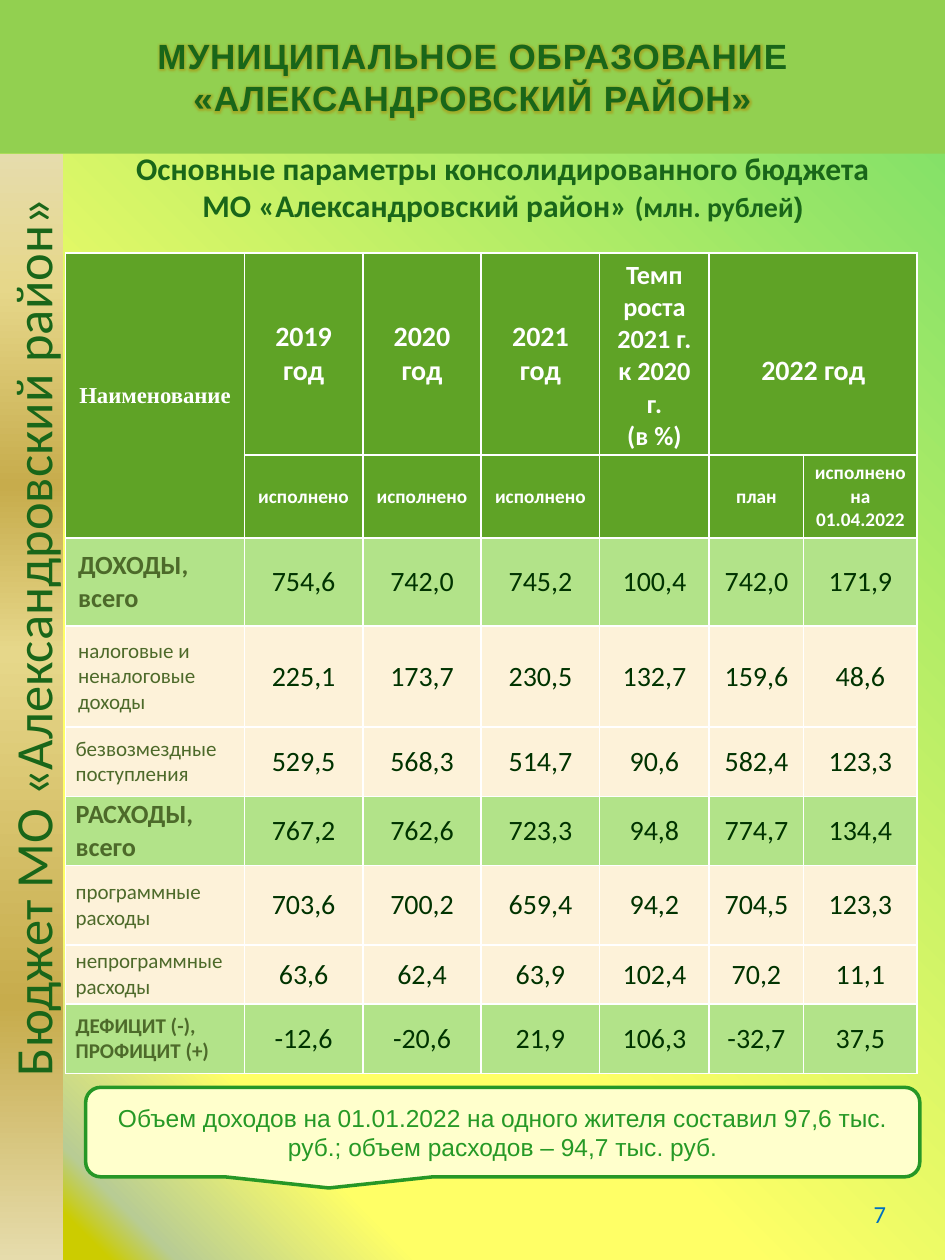
from lxml import etree
from pptx import Presentation
from pptx.dml.color import RGBColor
from pptx.enum.shapes import MSO_SHAPE
from pptx.enum.text import MSO_ANCHOR, PP_ALIGN
from pptx.oxml import parse_xml
from pptx.oxml.ns import nsdecls, qn
from pptx.util import Inches, Pt

RECTANGLE = MSO_SHAPE.RECTANGLE
CALLOUT = MSO_SHAPE.ROUNDED_RECTANGULAR_CALLOUT
LEFT, CENTER, RIGHT = PP_ALIGN.LEFT, PP_ALIGN.CENTER, PP_ALIGN.RIGHT
MIDDLE, TOP, BOTTOM = MSO_ANCHOR.MIDDLE, MSO_ANCHOR.TOP, MSO_ANCHOR.BOTTOM

DARK_GREEN, HEADER_GREEN, TOTAL_GREEN = "196619", "5FA326", "B2E389"
LABEL_GREEN, VALUE_GREEN, CREAM, WHITE = "4D6A2A", "003300", "FDF2D9", "FFFFFF"

BACKGROUND_STOPS = [(5, "CCCC00"), (8, "B8CC94"), (19, "FFFF66"),
                    (34, "FFFF66"), (95, "81E068"), (100, "9ED563")]
SIDEBAR_STOPS = [(0, "E6DCAC"), (12, "E6D78A"), (30, "C7AC4C"),
                 (45, "E6D78A"), (77, "C7AC4C"), (100, "E6DCAC")]

COLUMN_WIDTHS = [1.42, 0.94, 0.94, 0.94, 0.87, 0.75, 0.9]
ROW_HEIGHTS = [1.5, 0.66, 0.7, 0.8, 0.55, 0.55, 0.63, 0.47, 0.55]
YEARS = ["2019 год", "2020 год", "2021 год"]
GROWTH = "Темп роста 2021 г.\nк 2020 г.\n(в %)"
SUBHEADS = ["исполнено"] * 3 + ["", "план", "исполнено на 01.04.2022"]
# Label, label size, is a total row, has wide margins, values
BUDGET_ROWS = [
    ("ДОХОДЫ, всего", 15, True, True, "754,6 742,0 745,2 100,4 742,0 171,9"),
    ("налоговые и неналоговые доходы", 12, False, True, "225,1 173,7 230,5 132,7 159,6 48,6"),
    ("безвозмездные поступления", 12, False, False, "529,5 568,3 514,7 90,6 582,4 123,3"),
    ("РАСХОДЫ, всего", 15, True, False, "767,2 762,6 723,3 94,8 774,7 134,4"),
    ("программные расходы", 12, False, False, "703,6 700,2 659,4 94,2 704,5 123,3"),
    ("непрограммные расходы", 12, False, False, "63,6 62,4 63,9 102,4 70,2 11,1"),
    ("ДЕФИЦИТ (-), ПРОФИЦИТ (+)", 12, True, False, "-12,6 -20,6 21,9 106,3 -32,7 37,5"),
]


def rgb(color):
    return RGBColor.from_string(color)


def gradient_xml(stops, angle):
    stop_xml = "".join(
        f'<a:gs pos="{position * 1000}"><a:srgbClr val="{color}"/></a:gs>'
        for position, color in stops)
    return parse_xml(
        f'<a:gradFill {nsdecls("a")} rotWithShape="1"><a:gsLst>{stop_xml}</a:gsLst>'
        f'<a:lin ang="{angle * 60000}" scaled="0"/></a:gradFill>')


def set_gradient(fill, parent, stops, angle):
    fill.gradient()
    parent.replace(parent.find(qn("a:gradFill")), gradient_xml(stops, angle))


def format_run(run, size, color, bold=False, font="Calibri"):
    run.font.size = Pt(size)
    run.font.color.rgb = rgb(color)
    run.font.bold = bold
    run.font.name = font


def write_text(text_frame, text, size, color, bold=False, font="Calibri", align=CENTER):
    text_frame.text = text
    text_frame.word_wrap = True
    for paragraph in text_frame.paragraphs:
        paragraph.alignment = align
        for run in paragraph.runs:
            format_run(run, size, color, bold, font)


def add_panel(slide, kind, box, fill=None, line=None):
    shape = slide.shapes.add_shape(kind, *map(Inches, box))
    shape.shadow.inherit = False
    shape.text_frame.vertical_anchor = MIDDLE
    if fill:
        shape.fill.solid()
        shape.fill.fore_color.rgb = rgb(fill)
    if line:
        shape.line.color.rgb = rgb(line)
        shape.line.width = Pt(2)
    else:
        shape.line.fill.background()
    return shape


def add_text_box(slide, box, anchor):
    text_frame = slide.shapes.add_textbox(*map(Inches, box)).text_frame
    text_frame.word_wrap = True
    text_frame.vertical_anchor = anchor
    return text_frame


def add_glow(run):
    glow = parse_xml(
        f'<a:effectLst {nsdecls("a")}><a:glow rad="53100"><a:srgbClr val="B38600">'
        '<a:alpha val="50000"/></a:srgbClr></a:glow></a:effectLst>')
    run.font.fill  # the glow follows the fill of the run
    run.font._element.find(qn("a:solidFill")).addnext(glow)
    run.font._element.set("spc", "50")


def add_borders(cell):
    properties = cell._tc.get_or_add_tcPr()
    for index, side in enumerate(("lnL", "lnR", "lnT", "lnB")):
        line = etree.Element(qn(f"a:{side}"), w=str(Pt(1)))
        fill = etree.SubElement(line, qn("a:solidFill"))
        etree.SubElement(fill, qn("a:srgbClr"), val=WHITE)
        properties.insert(index, line)


def fill_cell(cell, text, fill, size, color, bold=False, font="Calibri",
              align=CENTER, wide=False):
    cell.fill.solid()
    cell.fill.fore_color.rgb = rgb(fill)
    add_borders(cell)
    cell.vertical_anchor = MIDDLE
    cell.margin_left = cell.margin_right = Inches(0.1 if wide else 0.08)
    cell.margin_top = cell.margin_bottom = Inches(0.05 if wide else 0)
    write_text(cell.text_frame, text, size, color, bold, font, align)


def add_budget_table(slide):
    table = slide.shapes.add_table(
        len(ROW_HEIGHTS), len(COLUMN_WIDTHS), Inches(0.52), Inches(2.01),
        Inches(sum(COLUMN_WIDTHS)), Inches(sum(ROW_HEIGHTS))).table
    for column, width in zip(table.columns, COLUMN_WIDTHS):
        column.width = Inches(width)
    for row, height in zip(table.rows, ROW_HEIGHTS):
        row.height = Inches(height)

    # Header rows
    headings = ["Наименование", *YEARS, GROWTH, "2022 год", ""]
    for column, text in enumerate(headings):
        size = {0: 13, 4: 15}.get(column, 16)
        font = "Times New Roman" if column == 0 else "Calibri"
        fill_cell(table.cell(0, column), text, HEADER_GREEN, size, WHITE, True, font, wide=True)
    for column, text in enumerate(["", *SUBHEADS]):
        fill_cell(table.cell(1, column), text, HEADER_GREEN, 11, WHITE, True)
    table.cell(0, 0).merge(table.cell(1, 0))
    table.cell(0, 5).merge(table.cell(0, 6))
    table.cell(0, 5).margin_top = Inches(0.32)

    # Budget rows
    for row, (label, size, total, wide, values) in enumerate(BUDGET_ROWS, start=2):
        fill = TOTAL_GREEN if total else CREAM
        fill_cell(table.cell(row, 0), label, fill, size, LABEL_GREEN, total,
                  align=LEFT, wide=wide)
        for column, value in enumerate(values.split(), start=1):
            fill_cell(table.cell(row, column), value, fill, 16, VALUE_GREEN)


def add_sidebar(slide):
    sidebar = add_panel(slide, RECTANGLE, (-4.14, 5.36, 8.78, 0.5))
    sidebar.rotation = 270
    set_gradient(sidebar.fill, sidebar._element.spPr, SIDEBAR_STOPS, 180)
    write_text(sidebar.text_frame, "Бюджет МО «Александровский район»", 30, DARK_GREEN)
    sidebar.text_frame.margin_left = Inches(1.2)


def add_subtitle(slide):
    text_frame = add_text_box(slide, (0.68, 1.13, 6.62, 0.71), TOP)
    write_text(text_frame, "Основные параметры консолидированного бюджета\n"
               "МО «Александровский район» ", 18, DARK_GREEN, True)
    for text, font in (("(млн. рублей", "Calibri"), (")", "Arial")):
        run = text_frame.paragraphs[1].add_run()
        run.text = text
        format_run(run, 16, DARK_GREEN, True, font)


def add_banner(slide):
    banner = add_panel(slide, RECTANGLE, (0, 0, 7.5, 1.22), "92D050")
    write_text(banner.text_frame, "МУНИЦИПАЛЬНОЕ ОБРАЗОВАНИЕ\n«АЛЕКСАНДРОВСКИЙ РАЙОН»",
               20, DARK_GREEN, True, "Arial")
    for paragraph in banner.text_frame.paragraphs:
        add_glow(paragraph.runs[0])


def main():
    presentation = Presentation()
    presentation.slide_width, presentation.slide_height = Inches(7.5), Inches(10)
    slide = presentation.slides.add_slide(presentation.slide_layouts[6])

    # Background
    background = slide.background.fill
    background.gradient()
    old_gradient = next(slide._element.iter(qn("a:gradFill")))
    old_gradient.getparent().replace(old_gradient, gradient_xml(BACKGROUND_STOPS, 315))

    add_sidebar(slide)
    add_subtitle(slide)
    add_budget_table(slide)

    # Callout with per-resident figures
    callout = add_panel(slide, CALLOUT, (0.68, 8.63, 6.62, 0.71), "FFFFCC", "269726")
    write_text(callout.text_frame, "Объем доходов на 01.01.2022 на одного жителя составил "
               "97,6 тыс. руб.; объем расходов – 94,7 тыс. руб.", 14, "269926", font="Arial")

    add_banner(slide)

    # Page number
    page_number = add_text_box(slide, (5.38, 8.75, 1.75, 1.05), BOTTOM)
    write_text(page_number, "7", 14, "0070C0", align=RIGHT)

    presentation.save("out.pptx")


if __name__ == "__main__":
    main()
